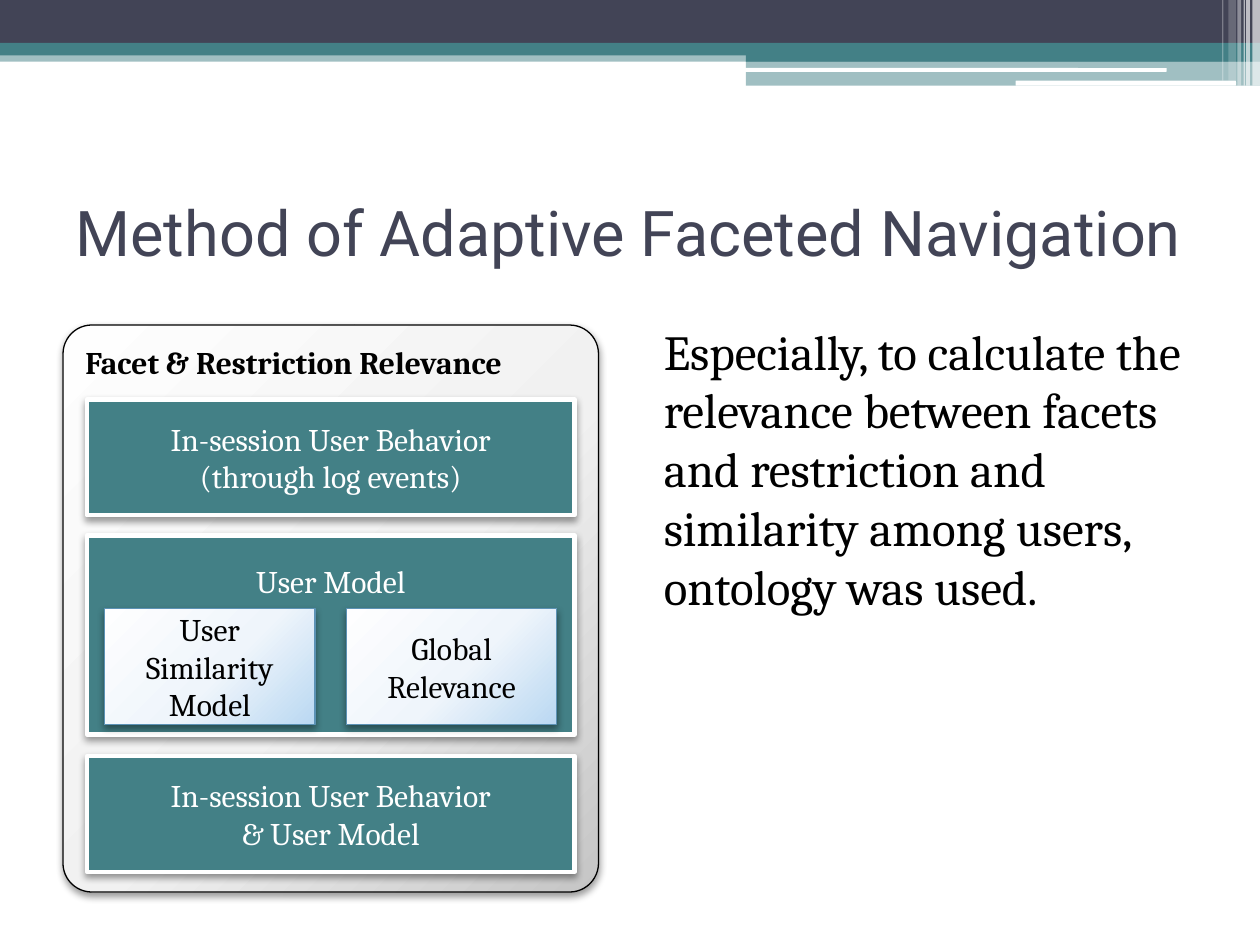
from dataclasses import dataclass

from lxml.etree import SubElement
from pptx import Presentation
from pptx.dml.color import RGBColor
from pptx.enum.shapes import MSO_SHAPE as Kind
from pptx.enum.text import MSO_ANCHOR as Anchor, MSO_AUTO_SIZE as Fit, PP_ALIGN as Align
from pptx.oxml.ns import qn
from pptx.util import Inches, Pt


@dataclass(frozen=True)
class Theme:
    """Colours, fonts and type sizes."""
    navy: str = "424456"
    teal: str = "438086"
    white: str = "FFFFFF"
    black: str = "000000"
    edge: str = "5C92B5"
    grey: tuple = ("FEFEFE", "F1F1F1", "C5C5C5")
    blue: tuple = ("FEFEFF", "EFF5FB", "BAD8F2")
    head: str = "Roboto"
    text: str = "Cambria"
    title: int = 36
    body: int = 28
    label: int = 18


THEME = Theme()

# left, top, width, height, colour, opacity in percent
BANDS = [
    (0, 0.4, 10, 0.09, THEME.teal, 50),
    (0, 0, 10, 0.34, THEME.navy, 100),
    (0, 0.34, 10, 0.1, THEME.teal, 100),
    (5.92, 0.39, 4.08, 0.1, THEME.teal, 100),
    (5.92, 0.48, 4.08, 0.2, THEME.teal, 50),
]
RULES = [(5.91, 0.54, 3.35, 0.03), (8.06, 0.64, 1.75, 0.04)]
# left, width, height, opacity in percent
STRIPES = [
    (9.94, 0.06, 0.68, 65),
    (9.89, 0.03, 0.68, 65),
    (9.87, 0.01, 0.68, 60),
    (9.82, 0.03, 0.68, 40),
    (9.75, 0.06, 0.64, 20),
    (9.7, 0.01, 0.64, 30),
]


def rgb(code):
    """Turn a hex code into a colour."""
    return RGBColor.from_string(code)


def add_tint(node, code, alpha):
    """Add a colour with opacity to an XML node."""
    tint = SubElement(node, qn("a:srgbClr"), val=code)
    SubElement(tint, qn("a:alpha"), val=str(alpha * 1000))


def add_block(slide, box, fill, alpha=100, kind=Kind.RECTANGLE):
    """Add a flat shape without outline or shadow."""
    block = slide.shapes.add_shape(kind, *map(Inches, box))
    block.shadow.inherit = False
    block.line.fill.background()
    block.fill.solid()
    block.fill.fore_color.rgb = rgb(fill)
    if alpha < 100:
        solid = block.element.spPr.find(qn("a:solidFill"))
        solid.remove(solid[0])
        add_tint(solid, fill, alpha)
    return block


def add_glow(shape, tones):
    """Fill a shape with a radial gradient centred beyond its top left."""
    props = shape.element.spPr
    old = props.find(qn("a:solidFill"))
    grad = SubElement(props, qn("a:gradFill"), rotWithShape="1")
    stops = SubElement(grad, qn("a:gsLst"))
    for place, code in zip((0, 55, 100), tones):
        stop = SubElement(stops, qn("a:gs"), pos=str(place * 1000))
        SubElement(stop, qn("a:srgbClr"), val=code)
    route = SubElement(grad, qn("a:path"))
    route.set("path", "circle")
    SubElement(route, qn("a:fillToRect"), l="-40000", t="-90000", r="140000", b="190000")
    props.replace(old, grad)


def add_card(slide, box, fill, line, width, kind=Kind.RECTANGLE):
    """Add an outlined shape with a soft shadow; a tuple fill is a gradient."""
    flat = isinstance(fill, str)
    card = add_block(slide, box, fill if flat else fill[0], kind=kind)
    card.line.color.rgb = rgb(line)
    card.line.width = Pt(width)
    if not flat:
        add_glow(card, fill)
    effect = card.element.spPr.find(qn("a:effectLst"))
    shade = SubElement(effect, qn("a:outerShdw"), blurRad=str(Pt(4.1)),
                       dist=str(Pt(2)), dir="5400000", rotWithShape="0")
    add_tint(shade, THEME.black, 40)
    return card


def set_text(shape, lines, size, color, font=THEME.text, align=Align.CENTER,
             anchor=Anchor.MIDDLE, bold=False):
    """Write one paragraph per line into a shape."""
    frame = shape.text_frame
    frame.word_wrap = True
    frame.auto_size = Fit.NONE
    frame.vertical_anchor = anchor
    frame.text = "\n".join(lines)
    for para in frame.paragraphs:
        para.alignment = align
        para.font.name = font
        para.font.size = Pt(size)
        para.font.bold = bold
        para.font.color.rgb = rgb(color)


def add_note(slide, box, text, size, bold=False):
    """Add a left-aligned text box."""
    note = slide.shapes.add_textbox(*map(Inches, box))
    set_text(note, [text], size, THEME.black, align=Align.LEFT,
             anchor=Anchor.TOP, bold=bold)


def add_banner(slide):
    """Draw the bands, rules and stripes along the top."""
    for *box, fill, alpha in BANDS:
        add_block(slide, box, fill, alpha)
    for box in RULES:
        add_block(slide, box, THEME.white, kind=Kind.ROUNDED_RECTANGLE)
    for left, width, height, alpha in STRIPES:
        add_block(slide, (left, 0, width, height), THEME.white, alpha)


def add_title(slide, text):
    """Place and format the title."""
    title = slide.shapes.title
    title.left, title.top, title.width, title.height = map(Inches, (0.5, 1.25, 9, 1.17))
    set_text(title, [text], THEME.title, THEME.navy, THEME.head, Align.LEFT)


def add_panel(slide):
    """Draw the relevance panel with its rows and inner models."""
    panel = add_card(slide, (0.5, 2.58, 4.25, 4.5), THEME.grey, THEME.black, 0.75,
                     Kind.ROUNDED_RECTANGLE)
    panel.adjustments[0] = 0.054
    add_note(slide, (0.58, 2.67, 4.08, 0.4), "Facet & Restriction Relevance",
             THEME.label, bold=True)

    rows = [
        (3.17, 0.92, ["In-session User Behavior", "(through log events)"], Anchor.MIDDLE),
        (4.25, 1.58, ["User Model"], Anchor.TOP),
        (6, 0.92, ["In-session User Behavior", "& User Model"], Anchor.MIDDLE),
    ]
    for top, height, lines, anchor in rows:
        row = add_card(slide, (0.69, top, 3.87, height), THEME.teal, THEME.white, 2.5)
        set_text(row, lines, THEME.label, THEME.white, anchor=anchor)
        if anchor == Anchor.TOP:
            row.text_frame.margin_top = Inches(0.21)

    models = [["User", "Similarity", "Model"], ["Global", "Relevance"]]
    for i, lines in enumerate(models):
        model = add_card(slide, (0.83 + 1.92 * i, 4.83, 1.67, 0.92),
                         THEME.blue, THEME.edge, 0.75)
        set_text(model, lines, THEME.label, THEME.black)


def main():
    """Build the slide and save it."""
    deck = Presentation()
    deck.slide_width, deck.slide_height = Inches(10), Inches(7.5)
    slide = deck.slides.add_slide(deck.slide_layouts[5])
    add_banner(slide)
    add_title(slide, "Method of Adaptive Faceted Navigation")
    add_panel(slide)
    add_note(slide, (5.17, 2.5, 4.33, 2.93),
             "Especially, to calculate the relevance between facets and restriction "
             "and similarity among users, ontology was used.", THEME.body)
    deck.save("out.pptx")


main()
